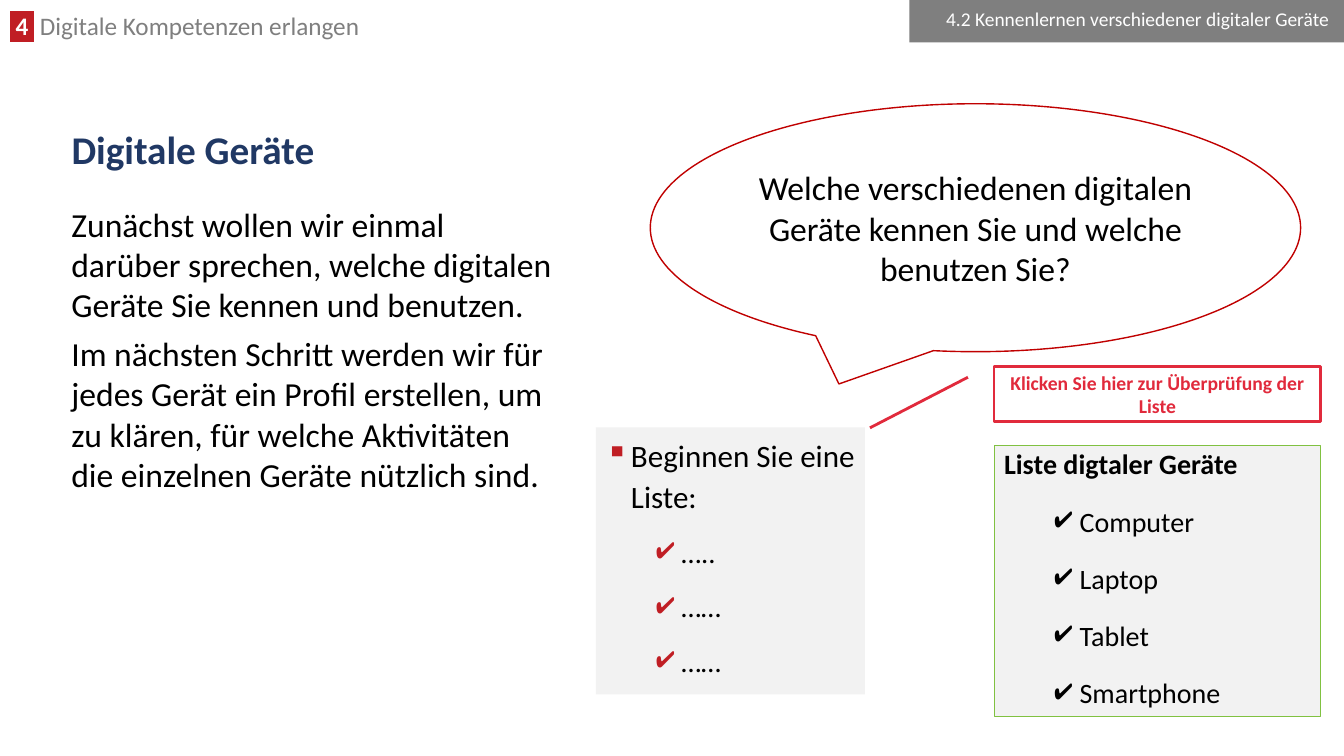
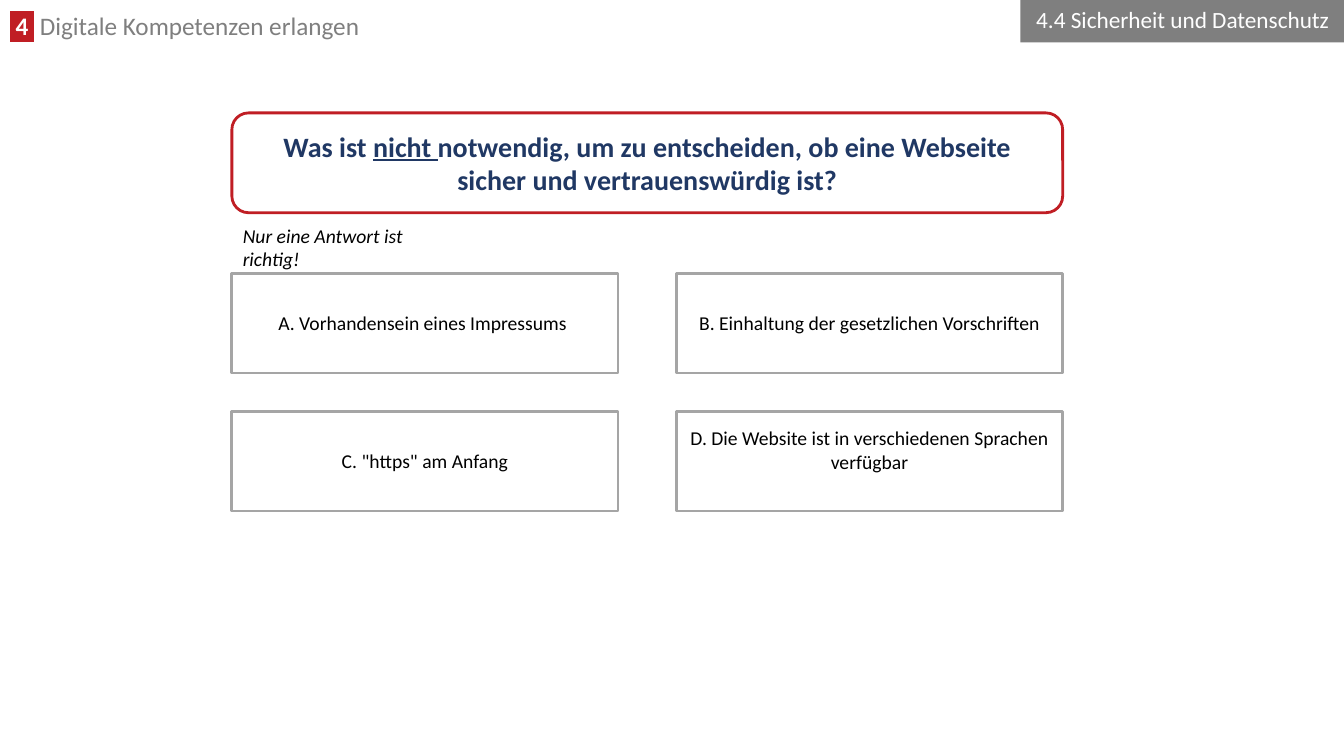
from dataclasses import dataclass

from lxml import etree
from pptx import Presentation
from pptx.dml.color import RGBColor
from pptx.enum.shapes import MSO_SHAPE
from pptx.enum.text import MSO_ANCHOR, PP_ALIGN
from pptx.oxml.ns import qn
from pptx.util import Emu, Pt

RECT = MSO_SHAPE.RECTANGLE
ROUNDED = MSO_SHAPE.ROUNDED_RECTANGLE
SPEECH = MSO_SHAPE.OVAL_CALLOUT
LINE_CALLOUT = MSO_SHAPE.LINE_CALLOUT_1
TOP, MIDDLE = MSO_ANCHOR.TOP, MSO_ANCHOR.MIDDLE
LEFT, CENTER, RIGHT = PP_ALIGN.LEFT, PP_ALIGN.CENTER, PP_ALIGN.RIGHT

PX = 9144
SLIDE_W, SLIDE_H = 1333, 750
TITLE_ONLY, BLANK = 5, 6


@dataclass(frozen=True)
class Theme:
    font: str = "Calibri"
    white: str = "FFFFFF"
    black: str = "000000"
    navy: str = "203864"
    red: str = "C01E24"
    speech_red: str = "C00000"
    hint_red: str = "E12A3C"
    green: str = "80C141"
    gray: str = "7F7F7F"
    border: str = "A5A5A5"
    panel: str = "F2F2F2"
    title: float = 28
    body: float = 24
    prompt: float = 22.2
    entry: float = 20.4
    heading: float = 20
    header: float = 18
    small: float = 14


THEME = Theme()


def px(*lengths):
    return [Emu(length * PX) for length in lengths]


def rgb(color):
    return RGBColor.from_string(color)


def add_run(paragraph, text, size, color=THEME.black, bold=False, italic=False,
            underline=False, highlight=None):
    run = paragraph.add_run()
    run.text = text
    font = run.font
    font.size, font.name = Pt(size), THEME.font
    font.bold, font.italic, font.underline = bold, italic, underline
    font.color.rgb = rgb(color)
    if highlight:
        marker = etree.Element(qn("a:highlight"))
        etree.SubElement(marker, qn("a:srgbClr"), val=highlight)
        run.font.fill._xPr.find(qn("a:solidFill")).addnext(marker)


def add_paragraph(frame, align=LEFT, spacing=1.0, before=0):
    first = frame.paragraphs[0]
    paragraph = frame.add_paragraph() if first.runs else first
    paragraph.alignment = align
    paragraph.line_spacing = spacing
    paragraph.space_before = Pt(before)
    return paragraph


def add_bullet(paragraph, mark, color, indent):
    properties = paragraph._p.get_or_add_pPr()
    left, hanging = px(indent, 25)
    properties.set("marL", str(left))
    properties.set("indent", str(-hanging))
    tint = etree.SubElement(properties, qn("a:buClr"))
    etree.SubElement(tint, qn("a:srgbClr"), val=color)
    etree.SubElement(properties, qn("a:buChar"), char=mark)


def add_checklist(frame, entries, size, color, spacing):
    for entry in entries:
        paragraph = add_paragraph(frame, spacing=spacing, before=12)
        paragraph.level = 1
        add_bullet(paragraph, "✔", color, 75)
        add_run(paragraph, entry, size)


def add_text(slide, box):
    frame = slide.shapes.add_textbox(*px(*box)).text_frame
    frame.word_wrap = True
    return frame


def add_box(slide, preset, box, fill, line=None, width=2, anchor=MIDDLE):
    shape = slide.shapes.add_shape(preset, *px(*box))
    shape.shadow.inherit = False
    shape.fill.solid()
    shape.fill.fore_color.rgb = rgb(fill)
    if line:
        shape.line.color.rgb = rgb(line)
        shape.line.width = Pt(width)
    else:
        shape.line.fill.background()
    shape.text_frame.word_wrap = True
    shape.text_frame.vertical_anchor = anchor
    return shape


def add_master_header(prs, slide):
    header = slide.shapes.add_textbox(*px(0, 11, 952, 35))
    header.text_frame.word_wrap = True
    paragraph = add_paragraph(header.text_frame, spacing=0.8)
    add_run(paragraph, " 4 ", THEME.header, THEME.white, bold=True, highlight=THEME.red)
    add_run(paragraph, " Digitale Kompetenzen erlangen", THEME.header, THEME.gray)
    prs.slide_master.shapes.element.append(header.element)


def add_section_tag(slide, text, width, size, spacing):
    tag = add_box(slide, RECT, (SLIDE_W - width, 0, width, 42), THEME.gray)
    paragraph = add_paragraph(tag.text_frame, RIGHT, spacing)
    add_run(paragraph, text, size, THEME.white)


def set_title(slide, text, box):
    title = slide.shapes.title
    title.left, title.top, title.width, title.height = px(*box)
    title.text_frame.vertical_anchor = MIDDLE
    paragraph = add_paragraph(title.text_frame, spacing=0.9)
    add_run(paragraph, text, THEME.title, THEME.navy, bold=True)


def build_devices(slide):
    set_title(slide, "Digitale Geräte", (61, 118, 1210, 66))
    add_section_tag(slide, "4.2 Kennenlernen verschiedener digitaler Geräte ", 431, 13.9, 0.7)

    intro = add_text(slide, (61, 197, 500, 532))
    for before, text in (
        (0, "Zunächst wollen wir einmal darüber sprechen, welche digitalen Geräte "
            "Sie kennen und benutzen."),
        (6, "Im nächsten Schritt werden wir für jedes Gerät ein Profil erstellen, um zu "
            "klären, für welche Aktivitäten die einzelnen Geräte nützlich sind."),
    ):
        add_run(add_paragraph(intro, before=before), text, THEME.body)

    starter = add_box(slide, RECT, (591, 424, 267, 265), THEME.panel, anchor=TOP).text_frame
    prompt = add_paragraph(starter, spacing=1.1)
    add_bullet(prompt, "▪", THEME.red, 25)
    add_run(prompt, "Beginnen Sie eine Liste:", THEME.prompt)
    add_checklist(starter, ("…..", "……", "……"), THEME.entry, THEME.red, 1.1)

    speech = add_box(slide, SPEECH, (645, 103, 645, 246), THEME.white, THEME.speech_red, 1)
    speech.adjustments[0], speech.adjustments[1] = -0.21, 0.63
    add_run(add_paragraph(speech.text_frame, CENTER),
            "Welche verschiedenen digitalen Geräte kennen Sie und welche benutzen Sie?",
            THEME.body)

    devices = add_box(slide, RECT, (986, 442, 324, 269), THEME.panel, THEME.green, 0.75,
                      TOP).text_frame
    add_run(add_paragraph(devices, spacing=0.9), "Liste digtaler Geräte", THEME.heading,
            bold=True)
    add_checklist(devices, ("Computer", "Laptop", "Tablet", "Smartphone"), THEME.heading,
                  THEME.black, 1.2)

    hint = add_box(slide, LINE_CALLOUT, (986, 364, 324, 54), THEME.white, THEME.hint_red)
    for index, value in enumerate((0.19, -0.08, 1.12, -0.38)):
        hint.adjustments[index] = value
    add_run(add_paragraph(hint.text_frame, CENTER),
            "Klicken Sie hier zur Überprüfung der Liste", THEME.small, THEME.hint_red,
            bold=True)


def build_quiz(slide):
    left, top, width, height, column_gap, row_gap = 230, 271, 383, 99, 58, 38
    add_section_tag(slide, "4.4 Sicherheit und Datenschutz ", 321, 16.6, 0.9)

    question = add_box(slide, ROUNDED, (left, 112, 2 * width + column_gap, height),
                       THEME.white, THEME.red)
    paragraph = add_paragraph(question.text_frame, CENTER)
    for text, underline in (
        ("Was ist ", False),
        ("nicht ", True),
        ("notwendig, um zu entscheiden, ob eine Webseite sicher und vertrauenswürdig ist?",
         False),
    ):
        add_run(paragraph, text, THEME.heading, THEME.navy, bold=True, underline=underline)

    answers = (
        ("A. Vorhandensein eines Impressums ", 5),
        ("B. Einhaltung der gesetzlichen Vorschriften", 5),
        ("C. \"https\" am Anfang", 5),
        ("D. Die Website ist in verschiedenen Sprachen verfügbar", 28),
    )
    for index, (text, bottom_inset) in enumerate(answers):
        row, column = divmod(index, 2)
        box = (left + column * (width + column_gap), top + row * (height + row_gap),
               width, height)
        answer = add_box(slide, RECT, box, THEME.white, THEME.border).text_frame
        answer.margin_bottom, = px(bottom_inset)
        add_run(add_paragraph(answer, CENTER), text, THEME.small)

    note = add_text(slide, (231, 217, 236, 34))
    add_run(add_paragraph(note), "Nur eine Antwort ist richtig!", THEME.small, italic=True)


def main():
    prs = Presentation()
    prs.slide_width, prs.slide_height = px(SLIDE_W, SLIDE_H)
    devices = prs.slides.add_slide(prs.slide_layouts[TITLE_ONLY])
    quiz = prs.slides.add_slide(prs.slide_layouts[BLANK])
    add_master_header(prs, devices)
    build_devices(devices)
    build_quiz(quiz)
    prs.save("out.pptx")


if __name__ == "__main__":
    main()
